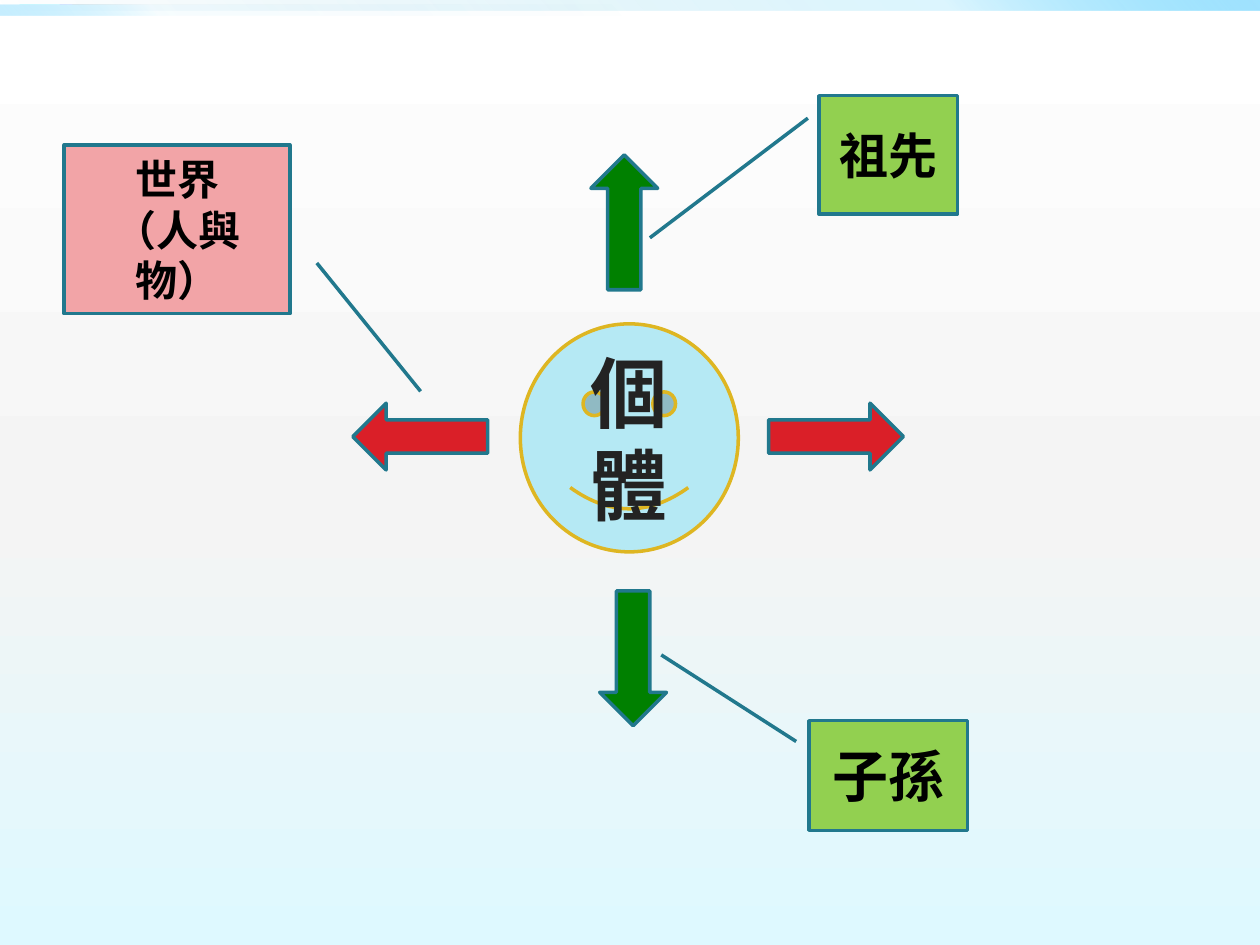
from dataclasses import dataclass

from lxml import etree
from pptx import Presentation
from pptx import util as u
from pptx.dml import color
from pptx.enum import shapes, text
from pptx.oxml import ns


@dataclass(frozen=True)
class Theme:
    font: str = "Cambria"
    ink: str = "000000"
    face_ink: str = "232323"
    face: str = "B5E9F4"
    face_line: str = "DEB622"
    outline: str = "21788D"
    lineage: str = "008000"
    world: str = "DA1F28"
    lineage_note: str = "92D050"
    world_note: str = "F2A4A7"
    line_width: float = 2
    face_size: int = 44
    ancestor_size: int = 28
    descendant_size: int = 32
    world_size: int = 24


theme = Theme()
Kind = shapes.MSO_SHAPE


def paint_gradient(owner, fill, stops, angle):
    """Fill with (position %, colour, opacity %) stops at a clockwise angle."""
    fill.gradient()
    gradient = next(owner.element.iter(ns.qn("a:gradFill")))
    stop_list = gradient.find(ns.qn("a:gsLst"))
    for old_stop in list(stop_list):
        stop_list.remove(old_stop)
    for position, rgb, opacity in stops:
        stop = etree.SubElement(stop_list, ns.qn("a:gs"), pos=str(position * 1000))
        tint = etree.SubElement(stop, ns.qn("a:srgbClr"), val=rgb)
        if opacity < 100:
            etree.SubElement(tint, ns.qn("a:alpha"), val=str(opacity * 1000))
    gradient.find(ns.qn("a:lin")).set("ang", str(angle * 60000))


def add_figure(kind, place, fill, line=theme.outline, lines=(), size=None, ink=theme.ink):
    """Add an outlined shape with optional bold centred text."""
    shape = page.shapes.add_shape(kind, *map(u.Inches, place))
    shape.shadow.inherit = False
    shape.fill.solid()
    shape.fill.fore_color.rgb = color.RGBColor.from_string(fill)
    shape.line.color.rgb = color.RGBColor.from_string(line)
    shape.line.width = u.Pt(theme.line_width)
    box = shape.text_frame
    box.vertical_anchor = text.MSO_ANCHOR.MIDDLE
    for index, words in enumerate(lines):
        para = box.add_paragraph() if index else box.paragraphs[0]
        para.alignment = text.PP_ALIGN.CENTER
        span = para.add_run()
        span.text = words
        span.font.color.rgb = color.RGBColor.from_string(ink)
        for name, value in {"name": theme.font, "size": u.Pt(size), "bold": True}.items():
            setattr(span.font, name, value)
    return shape


deck = Presentation()
deck.slide_width, deck.slide_height = u.Inches(10), u.Inches(7.5)
page = deck.slides.add_slide(deck.slide_layouts[6])

# Background
paint_gradient(page, page.background.fill,
               [(0, "FFFFFF", 100), (55, "F4F4F4", 100), (100, "DEF9FF", 100)], 90)

# Top bands
bands = [
    ((0, 0, 10, 0.08), 20, 100, 315),
    ((0, 0.04, 5, 0.08), 5, 60, 135),
]
for place, middle_opacity, end_opacity, angle in bands:
    band = page.shapes.add_shape(Kind.RECTANGLE, *map(u.Inches, place))
    band.shadow.inherit = False
    band.line.fill.background()
    paint_gradient(band, band.fill,
                   [(0, "008CAF", 0), (75, "52D0FF", middle_opacity),
                    (100, "A1E3FF", end_opacity)], angle)

# The individual in the centre
add_figure(Kind.SMILEY_FACE, (4.13, 2.57, 1.73, 1.81), theme.face, theme.face_line,
           ["個體"], theme.face_size, theme.face_ink)

# Arrows in four directions
arrow_long, arrow_short = 1.07, 0.53
arrows = [
    (Kind.UP_ARROW, 4.69, 1.23, arrow_short, arrow_long, theme.lineage),
    (Kind.DOWN_ARROW, 4.76, 4.69, arrow_short, arrow_long, theme.lineage),
    (Kind.LEFT_ARROW, 2.8, 3.2, arrow_long, arrow_short, theme.world),
    (Kind.RIGHT_ARROW, 6.1, 3.2, arrow_long, arrow_short, theme.world),
]
for kind, *place, fill in arrows:
    add_figure(kind, place, fill)

# Callouts: leader start and end are (y, x) fractions of the box
callouts = [
    ((6.5, 0.76, 1.1, 0.94), (0.19, -0.08, 1.2, -1.22),
     theme.lineage_note, ["祖先"], theme.ancestor_size),
    ((6.42, 5.72, 1.26, 0.87), (0.19, -0.08, -0.6, -0.93),
     theme.lineage_note, ["子孫"], theme.descendant_size),
    ((0.51, 1.15, 1.79, 1.34), (0.7, 1.12, 1.46, 1.58),
     theme.world_note, ["世界", "（人與物）"], theme.world_size),
]
for place, leader, fill, lines, size in callouts:
    callout = add_figure(Kind.LINE_CALLOUT_1, place, fill, lines=lines, size=size)
    for index, fraction in enumerate(leader):
        callout.adjustments[index] = fraction

deck.save("out.pptx")
